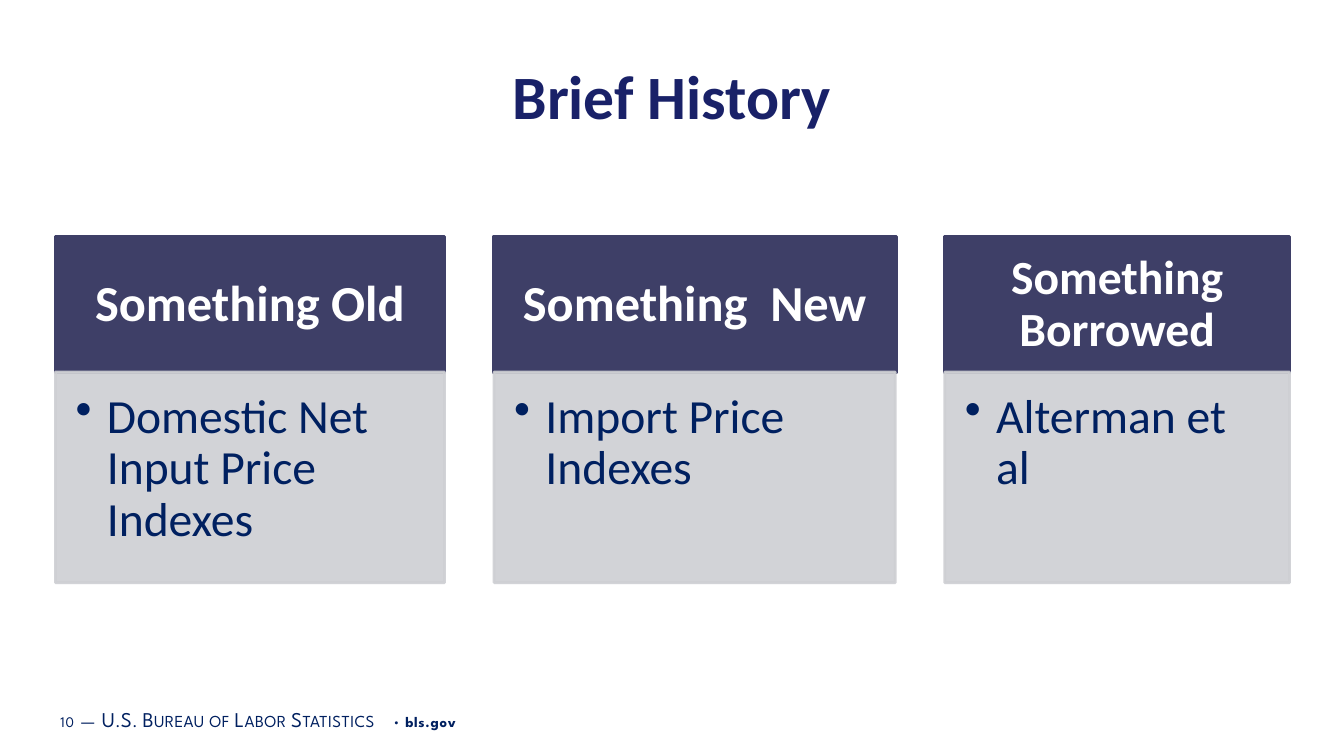
from dataclasses import dataclass

from lxml import etree
from pptx import Presentation
from pptx.dml.color import RGBColor
from pptx.enum.shapes import MSO_SHAPE
from pptx.enum.text import MSO_ANCHOR, PP_ALIGN
from pptx.oxml.ns import qn
from pptx.util import Inches, Pt

RECTANGLE = MSO_SHAPE.RECTANGLE
TOP, MIDDLE = MSO_ANCHOR.TOP, MSO_ANCHOR.MIDDLE
LEFT, CENTER = PP_ALIGN.LEFT, PP_ALIGN.CENTER


@dataclass(frozen=True)
class Theme:
    title_color: str = "192168"
    header_fill: str = "3E3F67"
    header_text: str = "FFFFFF"
    body_fill: str = "CECFD3"
    body_text: str = "002060"
    body_opacity: int = 90
    font: str = "Calibri"
    footer_font: str = "League Spartan"
    title_size: float = 44
    header_size: float = 36
    body_size: float = 34
    footer_size: float = 10.5
    agency_size: float = 15
    gap_size: float = 16


@dataclass(frozen=True)
class Column:
    heading: str
    item: str
    left: float
    width: float
    heading_size: float
    body_inset: float = 0


@dataclass(frozen=True)
class FooterRun:
    text: str
    size: float
    spacing: float = 0.5
    small_caps: bool = False
    bold: bool = False


THEME = Theme()
HEADER_TOP, HEADER_HEIGHT = 2.35, 1.35
BODY_TOP, BODY_HEIGHT = 3.69, 2.09
BULLET_INDENT = 0.31

COLUMNS = (
    Column("Something Old", "Domestic Net Input Price Indexes", 0.55, 3.86, THEME.header_size),
    Column("Something  New", "Import Price Indexes", 4.89, 4, THEME.header_size, 0.01),
    Column("Something Borrowed", "Alterman et al", 9.37, 3.42, THEME.body_size),
)

FOOTER = (
    FooterRun("10", THEME.footer_size),
    FooterRun(" ", THEME.gap_size),
    FooterRun("—", THEME.agency_size, 0.3, small_caps=True),
    FooterRun(" ", THEME.gap_size),
    FooterRun("U.S. Bureau of Labor Statistics", THEME.agency_size, 0.3, small_caps=True),
    FooterRun(" • ", THEME.footer_size),
    FooterRun("bls.gov", THEME.footer_size, bold=True),
)


def add_text(paragraph, text: str, *, size: float, color: str, font: str = THEME.font,
             bold: bool = False, spacing: float = 0, small_caps: bool = False) -> None:
    run = paragraph.add_run()
    run.text = text
    run.font.size = Pt(size)
    run.font.name = font
    run.font.bold = bold
    run.font.color.rgb = RGBColor.from_string(color)
    properties = run.font._element
    if spacing:
        properties.set("spc", str(round(spacing * 100)))
    if small_caps:
        properties.set("cap", "small")


def set_frame(frame, anchor, insets: tuple[float, float, float, float]) -> None:
    """Insets run left, top, right, bottom, in inches."""
    frame.word_wrap = True
    frame.vertical_anchor = anchor
    (frame.margin_left, frame.margin_top,
     frame.margin_right, frame.margin_bottom) = map(Inches, insets)


def add_panel(slide, left: float, top: float, width: float, height: float,
              color: str, opacity: int = 100):
    panel = slide.shapes.add_shape(
        RECTANGLE, Inches(left), Inches(top), Inches(width), Inches(height))
    panel.shadow.inherit = False
    panel.fill.solid()
    panel.fill.fore_color.rgb = RGBColor.from_string(color)
    panel.line.color.rgb = RGBColor.from_string(color)
    panel.line.width = Pt(2)
    if opacity < 100:
        for color_element in panel._element.spPr.iter(qn("a:srgbClr")):
            etree.SubElement(color_element, qn("a:alpha"), val=str(opacity * 1000))
    return panel


def add_bullet(paragraph) -> None:
    properties = paragraph._p.get_or_add_pPr()
    properties.set("marL", str(Inches(BULLET_INDENT)))
    properties.set("indent", str(-Inches(BULLET_INDENT)))
    etree.SubElement(properties, qn("a:buChar"), char="•")


def add_column(slide, column: Column) -> None:
    header = add_panel(slide, column.left, HEADER_TOP, column.width, HEADER_HEIGHT,
                       THEME.header_fill)
    set_frame(header.text_frame, MIDDLE, (0.28, 0.16, 0.28, 0.16))
    heading = header.text_frame.paragraphs[0]
    heading.alignment = CENTER
    heading.line_spacing = 0.9
    add_text(heading, column.heading, size=column.heading_size,
             color=THEME.header_text, bold=True)

    body = add_panel(slide, column.left + column.body_inset, BODY_TOP,
                     column.width - 2 * column.body_inset, BODY_HEIGHT,
                     THEME.body_fill, THEME.body_opacity)
    set_frame(body.text_frame, TOP, (0.2, 0.2, 0.26, 0.3))
    item = body.text_frame.paragraphs[0]
    item.alignment = LEFT
    item.line_spacing = 0.9
    add_bullet(item)
    add_text(item, column.item, size=THEME.body_size, color=THEME.body_text)


def add_title(slide, text: str) -> None:
    title = slide.shapes.title
    title.left, title.top = Inches(0.54), Inches(0.5)
    title.width, title.height = Inches(12.25), Inches(0.88)
    set_frame(title.text_frame, MIDDLE, (0.1, 0.05, 0.1, 0.05))
    paragraph = title.text_frame.paragraphs[0]
    paragraph.alignment = CENTER
    add_text(paragraph, text, size=THEME.title_size, color=THEME.title_color, bold=True)


def add_footer(slide) -> None:
    footer = slide.shapes.add_textbox(Inches(0.53), Inches(6.93), Inches(8.47), Inches(0.4))
    set_frame(footer.text_frame, MIDDLE, (0.07, 0.04, 0.07, 0.04))
    paragraph = footer.text_frame.paragraphs[0]
    for part in FOOTER:
        add_text(paragraph, part.text, size=part.size, color=THEME.body_text,
                 font=THEME.footer_font, bold=part.bold, spacing=part.spacing,
                 small_caps=part.small_caps)


def main() -> None:
    presentation = Presentation()
    presentation.slide_width = Inches(13.33)
    presentation.slide_height = Inches(7.5)
    slide = presentation.slides.add_slide(presentation.slide_layouts.get_by_name("Title Only"))
    add_title(slide, "Brief History")
    for column in COLUMNS:
        add_column(slide, column)
    add_footer(slide)
    presentation.save("out.pptx")


if __name__ == "__main__":
    main()
